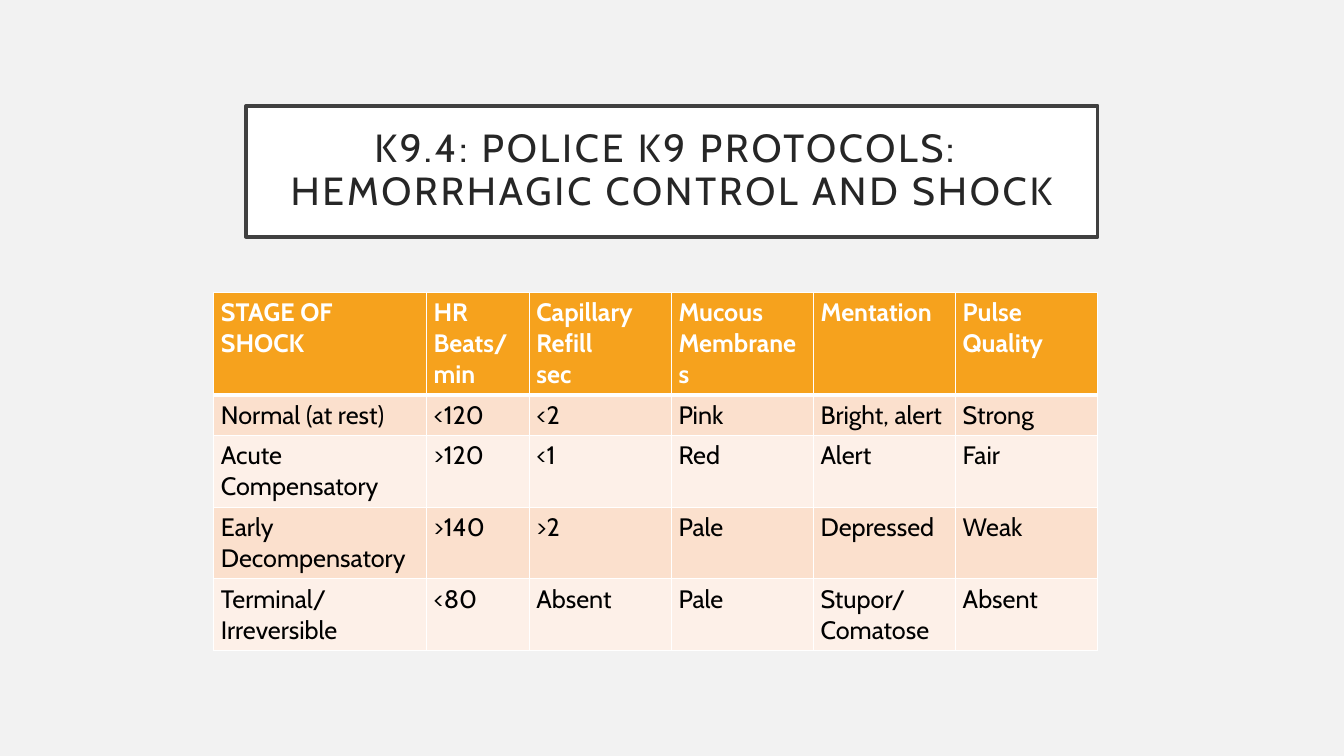
"""Build the slide on stages of shock in police dogs."""
from dataclasses import dataclass

from lxml import etree
from pptx import Presentation
from pptx.dml.color import RGBColor
from pptx.enum.shapes import MSO_SHAPE
from pptx.enum.text import MSO_ANCHOR, PP_ALIGN
from pptx.oxml.ns import qn
from pptx.util import Inches, Pt

RECTANGLE = MSO_SHAPE.RECTANGLE
MIDDLE = MSO_ANCHOR.MIDDLE
LEFT, CENTER = PP_ALIGN.LEFT, PP_ALIGN.CENTER
BLANK_LAYOUT = 6


@dataclass(frozen=True)
class Theme:
    """Colours, type sizes and line widths of the slide."""
    font: str = "Cabin"
    title_size: float = 28
    table_size: float = 18
    title_spacing: float = 2
    frame_width: float = 2.5
    rule_width: float = 1
    header_rule_width: float = 3
    background: str = "F2F2F2"
    white: str = "FFFFFF"
    frame: str = "404040"
    title_ink: str = "262626"
    body_ink: str = "000000"
    header_fill: str = "F6A21D"
    band_fills: tuple = ("FBE0CD", "FDF0E8")


THEME = Theme()
GRID = Inches(0.1)
SLIDE_COLUMNS, SLIDE_ROWS = 133.33, 75
TITLE_AREA = (24.4, 10.5, 84.5, 13)
TITLE_INSET = 2
TABLE_LEFT, TABLE_TOP = 21.2, 29
TABLE_COLUMNS = (21.1, 10.2, 14.1, 14.1, 14.1, 14.1)
CELL_INSETS = (0.72, 0.5, 0.72, 0.5)
LINE_ROWS = 3.05

TITLE = "K9.4: POLICE K9 PROTOCOLS: \vHEMORRHAGIC CONTROL AND SHOCK"
STAGES = (
    ("STAGE OF SHOCK", "HR\nBeats/\nmin", "Capillary\nRefill\nsec",
     "Mucous\nMembranes", "Mentation", "Pulse\nQuality"),
    ("Normal (at rest)", "<120", "<2", "Pink", "Bright, alert", "Strong"),
    ("Acute\nCompensatory", ">120", "<1", "Red", "Alert", "Fair"),
    ("Early\nDecompensatory", ">140", ">2", "Pale", "Depressed", "Weak"),
    ("Terminal/\nIrreversible", "<80", "Absent", "Pale",
     "Stupor/\nComatose", "Absent"),
)


def units(count):
    """Turn a number of grid units into a length."""
    return round(count * GRID)


def paint(fill, color):
    """Make a fill solid in one colour."""
    fill.solid()
    fill.fore_color.rgb = RGBColor.from_string(color)


def set_insets(holder, left, top, right, bottom):
    """Set the margins of a text frame or table cell in grid units."""
    holder.margin_left, holder.margin_top = units(left), units(top)
    holder.margin_right, holder.margin_bottom = units(right), units(bottom)


def write(frame, text, *, size, color, bold=False, align=LEFT,
          line_spacing=1.0, letter_spacing=0):
    """Write text into a frame, one paragraph for each line."""
    frame.word_wrap = True
    frame.text = text
    for para in frame.paragraphs:
        para.alignment = align
        para.line_spacing = line_spacing
        for span in para.runs:
            span.font.name = THEME.font
            span.font.size = Pt(size)
            span.font.bold = bold
            span.font.color.rgb = RGBColor.from_string(color)
            if letter_spacing:
                span.font._element.set("spc", str(round(letter_spacing * 100)))


def add_title(page):
    """Add the framed title."""
    box = page.shapes.add_shape(RECTANGLE, *map(units, TITLE_AREA))
    box.shadow.inherit = False
    paint(box.fill, THEME.white)
    paint(box.line.fill, THEME.frame)
    box.line.width = Pt(THEME.frame_width)
    frame = box.text_frame
    frame.vertical_anchor = MIDDLE
    set_insets(frame, *[TITLE_INSET] * 4)
    write(frame, TITLE, size=THEME.title_size, color=THEME.title_ink,
          align=CENTER, line_spacing=0.9, letter_spacing=THEME.title_spacing)


def set_borders(cell, **widths):
    """Draw white cell borders, with widths by side L, R, T or B."""
    properties = cell._tc.get_or_add_tcPr()
    for side in "LRTB":
        width = widths.get(side, THEME.rule_width)
        line = etree.SubElement(properties, qn(f"a:ln{side}"), w=str(Pt(width)))
        solid = etree.SubElement(line, qn("a:solidFill"))
        etree.SubElement(solid, qn("a:srgbClr"), val=THEME.white)


def format_cell(cell, text, row):
    """Fill, rule and write one cell according to its row."""
    header = row == 0
    set_insets(cell, *CELL_INSETS)
    heavy = THEME.header_rule_width
    set_borders(cell, **({"B": heavy} if header else {"T": heavy} if row == 1 else {}))
    paint(cell.fill, THEME.header_fill if header else THEME.band_fills[(row - 1) % 2])
    write(cell.text_frame, text, size=THEME.table_size, bold=header,
          color=THEME.white if header else THEME.body_ink)


def add_stage_table(page):
    """Add the table of shock stages, with row heights from line counts."""
    heights = [1 + LINE_ROWS * max(text.count("\n") + 1 for text in stage)
               for stage in STAGES]
    table = page.shapes.add_table(
        len(STAGES), len(TABLE_COLUMNS), units(TABLE_LEFT), units(TABLE_TOP),
        units(sum(TABLE_COLUMNS)), units(sum(heights))).table
    for column, width in zip(table.columns, TABLE_COLUMNS):
        column.width = units(width)
    for row, stage in enumerate(STAGES):
        table.rows[row].height = units(heights[row])
        for column, text in enumerate(stage):
            format_cell(table.cell(row, column), text, row)


def main():
    """Build and save the deck."""
    deck = Presentation()
    deck.slide_width, deck.slide_height = units(SLIDE_COLUMNS), units(SLIDE_ROWS)
    page = deck.slides.add_slide(deck.slide_layouts[BLANK_LAYOUT])
    paint(page.background.fill, THEME.background)
    add_title(page)
    add_stage_table(page)
    deck.save("out.pptx")


if __name__ == "__main__":
    main()
